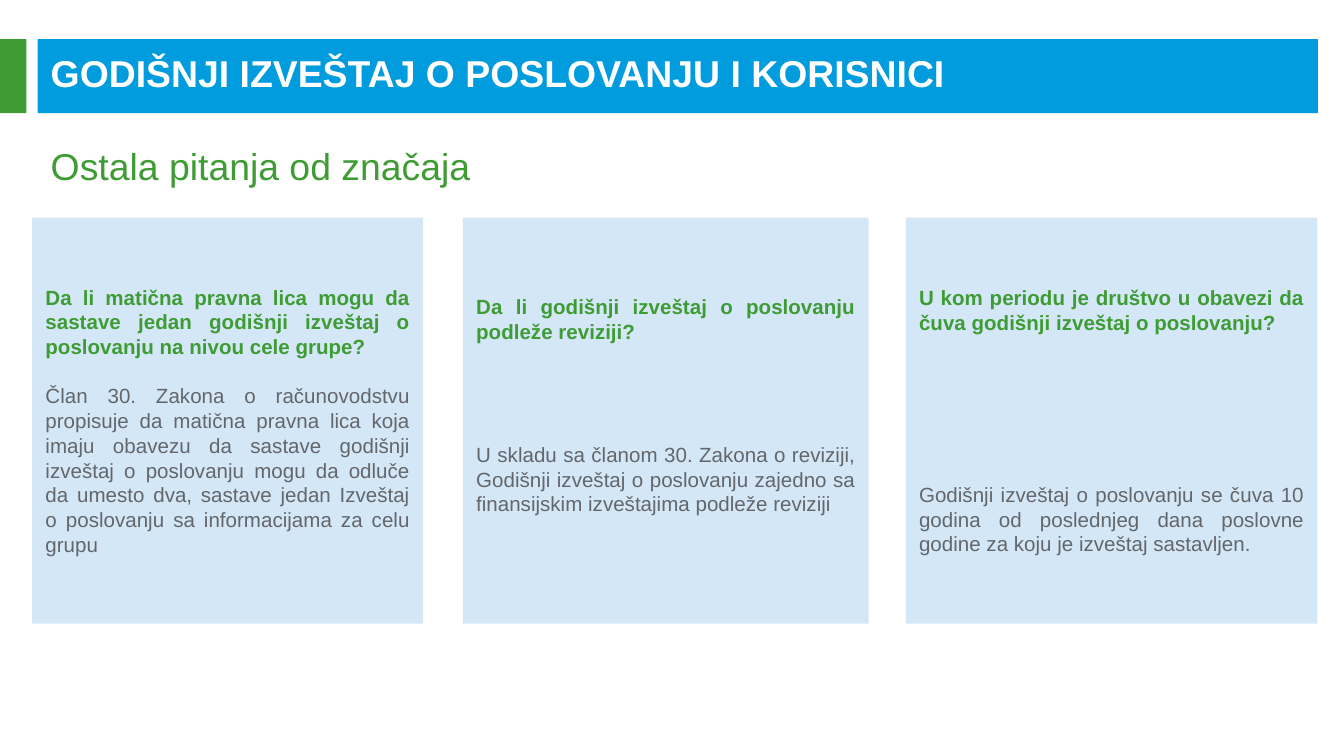
from dataclasses import dataclass

import pptx
import pptx.dml.color
import pptx.enum.shapes
import pptx.enum.text
import pptx.util

Cm = pptx.util.Cm
Pt = pptx.util.Pt
Anchor = pptx.enum.text.MSO_ANCHOR
Align = pptx.enum.text.PP_ALIGN

BLUE, GREEN, PALE, GREY, WHITE = "009CDE", "3F9C35", "D4E7F7", "63666A", "FFFFFF"
CARD_TOP, CARD_HEIGHT = 4.11, 7.67
BAR_TOP, BAR_HEIGHT = 0.74, 1.4
LINE_PITCH = 13.2


@dataclass
class Card:
    left: float
    width: float
    question: str
    answer: str
    gap_lines: int
    bottom_inset: float = 0.13


CARDS = [
    Card(0.61, 7.39,
         "Da li matična pravna lica mogu da sastave jedan godišnji izveštaj o "
         "poslovanju na nivou cele grupe?",
         "Član 30. Zakona o računovodstvu propisuje da matična pravna lica koja imaju "
         "obavezu da sastave godišnji izveštaj o poslovanju mogu da odluče da umesto dva, "
         "sastave jedan Izveštaj o poslovanju sa informacijama za celu grupu", 1),
    Card(8.75, 7.67,
         "Da li godišnji izveštaj o poslovanju podleže reviziji?",
         "U skladu sa članom 30. Zakona o reviziji, Godišnji izveštaj o poslovanju "
         "zajedno sa finansijskim izveštajima podleže reviziji", 4, 0.71),
    Card(17.12, 7.78,
         "U kom periodu je društvo u obavezi da čuva godišnji izveštaj o poslovanju?",
         "Godišnji izveštaj o poslovanju se čuva 10 godina od poslednjeg dana poslovne "
         "godine za koju je izveštaj sastavljen.", 6),
]


def color(value: str) -> pptx.dml.color.RGBColor:
    return pptx.dml.color.RGBColor.from_string(value)


def add_rectangle(slide, left: float, top: float, width: float, height: float, fill: str):
    shape = slide.shapes.add_shape(
        pptx.enum.shapes.MSO_SHAPE.RECTANGLE, Cm(left), Cm(top), Cm(width), Cm(height))
    shape.shadow.inherit = False
    shape.fill.solid()
    shape.fill.fore_color.rgb = color(fill)
    shape.line.fill.background()
    return shape


def add_run(paragraph, text: str, size: float, fill: str, bold: bool = False) -> None:
    run = paragraph.add_run()
    run.text = text
    run.font.name = "Arial"
    run.font.size = Pt(size)
    run.font.bold = bold
    run.font.color.rgb = color(fill)


def add_heading(slide, text: str, top: float, height: float, fill: str,
                bold: bool = False) -> None:
    shape = slide.shapes.add_textbox(Cm(0.71), Cm(top), Cm(23.8), Cm(height))
    frame = shape.text_frame
    frame.word_wrap = True
    frame.vertical_anchor = Anchor.MIDDLE
    add_run(frame.paragraphs[0], text, 20, fill, bold)


def add_card(slide, card: Card) -> None:
    shape = add_rectangle(slide, card.left, CARD_TOP, card.width, CARD_HEIGHT, PALE)
    frame = shape.text_frame
    frame.word_wrap = True
    frame.vertical_anchor = Anchor.MIDDLE
    frame.margin_bottom = Cm(card.bottom_inset)
    question = frame.paragraphs[0]
    add_run(question, card.question, 11, GREEN, True)
    answer = frame.add_paragraph()
    answer.space_before = Pt(card.gap_lines * LINE_PITCH)
    add_run(answer, card.answer, 11, GREY)
    for paragraph in (question, answer):
        paragraph.alignment = Align.JUSTIFY


def main() -> None:
    presentation = pptx.Presentation()
    presentation.slide_width = Cm(25.4)
    presentation.slide_height = Cm(14.28)
    slide = presentation.slides.add_slide(presentation.slide_layouts[6])
    add_rectangle(slide, 0.71, BAR_TOP, 24.2, BAR_HEIGHT, BLUE)
    add_rectangle(slide, 0, BAR_TOP, 0.5, BAR_HEIGHT, GREEN)
    add_heading(slide, "GODIŠNJI IZVEŠTAJ O POSLOVANJU I KORISNICI",
                0.99, 0.76, WHITE, True)
    add_heading(slide, "Ostala pitanja od značaja", 2.46, 1.35, GREEN)
    for card in CARDS:
        add_card(slide, card)
    presentation.save("out.pptx")


if __name__ == "__main__":
    main()
